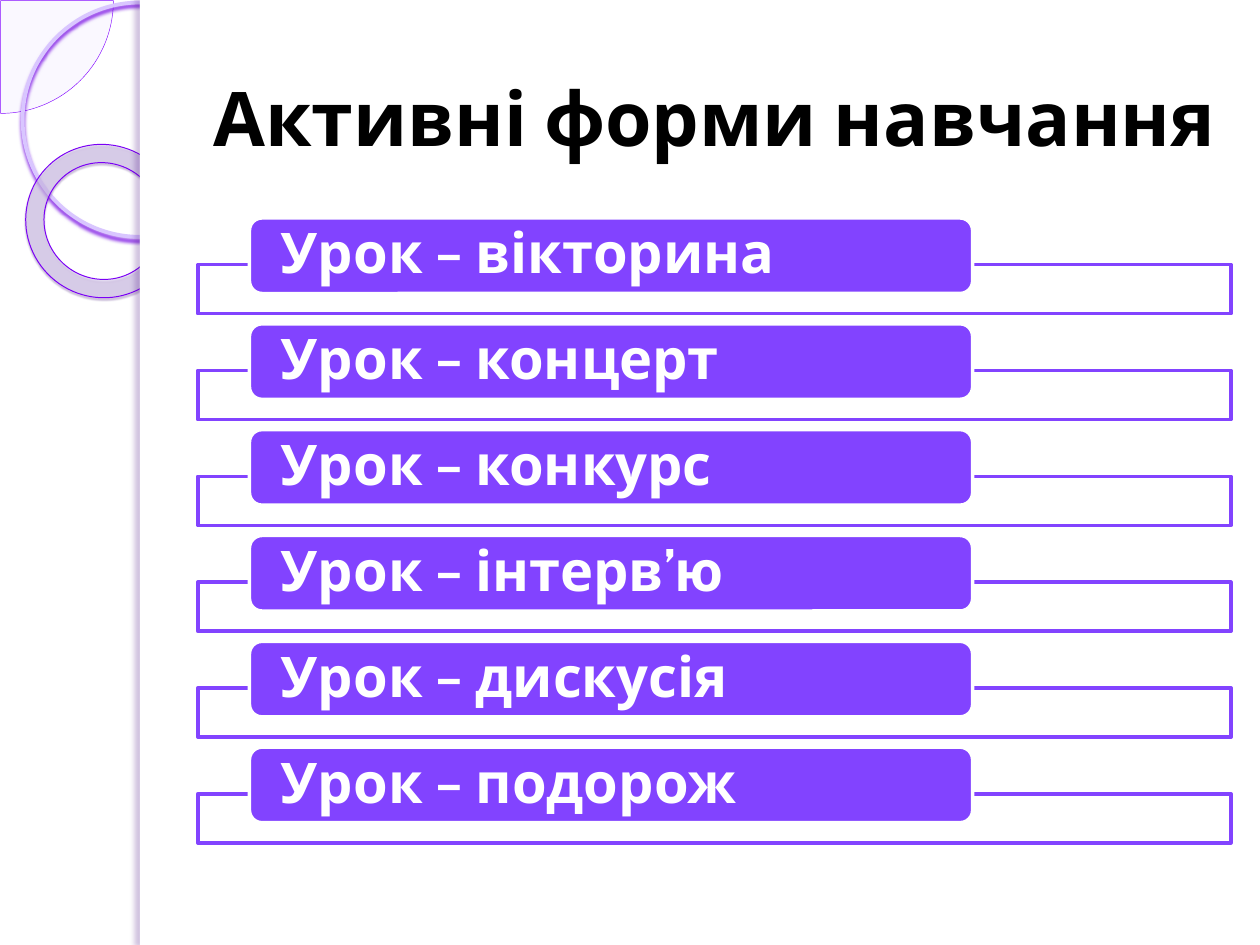
from pptx import Presentation
from pptx.dml.color import RGBColor
from pptx.enum.shapes import MSO_SHAPE as Preset
from pptx.enum.text import MSO_ANCHOR as Anchor, PP_ALIGN as Align
from pptx.oxml.ns import qn
from pptx.util import Inches, Pt
from lxml.etree import SubElement

BLACK = RGBColor(0x00, 0x00, 0x00)
WHITE = RGBColor(0xFF, 0xFF, 0xFF)
VIOLET = RGBColor(0x82, 0x43, 0xFF)
PALE_VIOLET = RGBColor(0xF1, 0xEA, 0xFF)
BRIGHT_VIOLET = RGBColor(0x83, 0x07, 0xFF)
LILAC = RGBColor(0xD9, 0xC6, 0xFF)
RING_FILL = RGBColor(0xD8, 0xCC, 0xEC)
RING_LINE = RGBColor(0x7B, 0x00, 0xF5)
CIRCLE_SHADOW = RGBColor(0x71, 0x00, 0xE2)
RING_SHADOW = RGBColor(0x38, 0x00, 0x70)
EDGE_SHADOW = RGBColor(0x4C, 0x14, 0x84)

COLUMNS, ROWS = 100, 75
LESSONS = ["вікторина", "концерт", "конкурс", "інтерв’ю", "дискусія", "подорож"]


class LessonSlide:
    """Holds the style and the slide; places elements on a 100 by 75 grid."""

    font = "Cabin"

    def __init__(self, presentation):
        self.slide = presentation.slides.add_slide(presentation.slide_layouts[6])
        self.cell_width = presentation.slide_width / COLUMNS
        self.cell_height = presentation.slide_height / ROWS

    def box(self, column, row, width, height):
        return (round(column * self.cell_width), round(row * self.cell_height),
                round(width * self.cell_width), round(height * self.cell_height))

    def shape(self, preset, area, fill=None, opacity=100, line=None,
              line_width=2, adjustments=()):
        shape = self.slide.shapes.add_shape(preset, *self.box(*area))
        shape.shadow.inherit = False
        for index, value in enumerate(adjustments):
            shape.adjustments[index] = value
        if fill is None:
            shape.fill.background()
        else:
            shape.fill.solid()
            shape.fill.fore_color.rgb = fill
            color = shape._element.spPr.find(qn("a:solidFill"))[0]
            SubElement(color, qn("a:alpha"), val=str(opacity * 1000))
        if line is None:
            shape.line.fill.background()
        else:
            shape.line.color.rgb = line
            shape.line.width = Pt(line_width)
        return shape

    def shadow(self, shape, color, opacity, blur, distance, angle):
        """Cast an outer shadow; blur and distance in points, angle in degrees."""
        effects = shape._element.spPr.find(qn("a:effectLst"))
        outer = SubElement(effects, qn("a:outerShdw"), blurRad=str(Pt(blur)),
                           dist=str(Pt(distance)), dir=str(angle * 60000),
                           algn="tl", rotWithShape="0")
        tint = SubElement(outer, qn("a:srgbClr"), val=str(color))
        SubElement(tint, qn("a:alpha"), val=str(opacity * 1000))

    def set_text(self, shape, text, size, color, align):
        frame = shape.text_frame
        frame.text = text
        frame.word_wrap = True
        frame.vertical_anchor = Anchor.MIDDLE
        paragraph = frame.paragraphs[0]
        paragraph.alignment = align
        font = paragraph.runs[0].font
        font.name, font.size, font.bold = self.font, Pt(size), True
        font.color.rgb = color
        return frame

    def side_ornament(self):
        self.shape(Preset.PIE, (-8.9, -8.9, 17.9, 17.9), PALE_VIOLET, 33,
                   BRIGHT_VIOLET, 0.25, (0, 54))
        circle = self.shape(Preset.OVAL, (1.8, 0.2, 18.6, 18.6),
                            line=LILAC, line_width=2.15)
        self.shadow(circle, CIRCLE_SHADOW, 85, 2, 2, 90)
        ring = self.shape(Preset.DONUT, (2, 11.5, 12.3, 12.1), RING_FILL, 60,
                          RING_LINE, 0.58, (0.12,))
        ring.rotation = 38.6
        self.shadow(ring, RING_SHADOW, 35, 1, 1.2, 75)
        self.shape(Preset.RECTANGLE, (11.1, 0, COLUMNS - 11.1, ROWS), WHITE)
        edge = self.shape(Preset.RECTANGLE, (11.1, 0, 0.8, ROWS), WHITE)
        self.shadow(edge, EDGE_SHADOW, 25, 3, 3, 180)

    def title(self, text):
        text_box = self.slide.shapes.add_textbox(*self.box(15.7, 3, 82, 12.5))
        self.set_text(text_box, text, 43, BLACK, Align.CENTER)

    def lesson(self, row, text):
        self.shape(Preset.RECTANGLE, (15.7, row + 3.7, 82, 3.9), WHITE, 90, VIOLET)
        label = self.shape(Preset.ROUNDED_RECTANGLE, (19.8, row, 57.4, 6),
                           VIOLET, line=WHITE)
        frame = self.set_text(label, text, 32, WHITE, Align.LEFT)
        frame.margin_left = frame.margin_right = Inches(0.22)
        frame.margin_top = frame.margin_bottom = 0
        frame.paragraphs[0].line_spacing = 0.9


def main():
    presentation = Presentation()
    presentation.slide_width, presentation.slide_height = Inches(10), Inches(7.5)
    slide = LessonSlide(presentation)
    slide.side_ornament()
    slide.title("Активні форми навчання")
    for index, name in enumerate(LESSONS):
        slide.lesson(17.3 + 8.4 * index, f"Урок – {name}")
    presentation.save("out.pptx")


if __name__ == "__main__":
    main()
